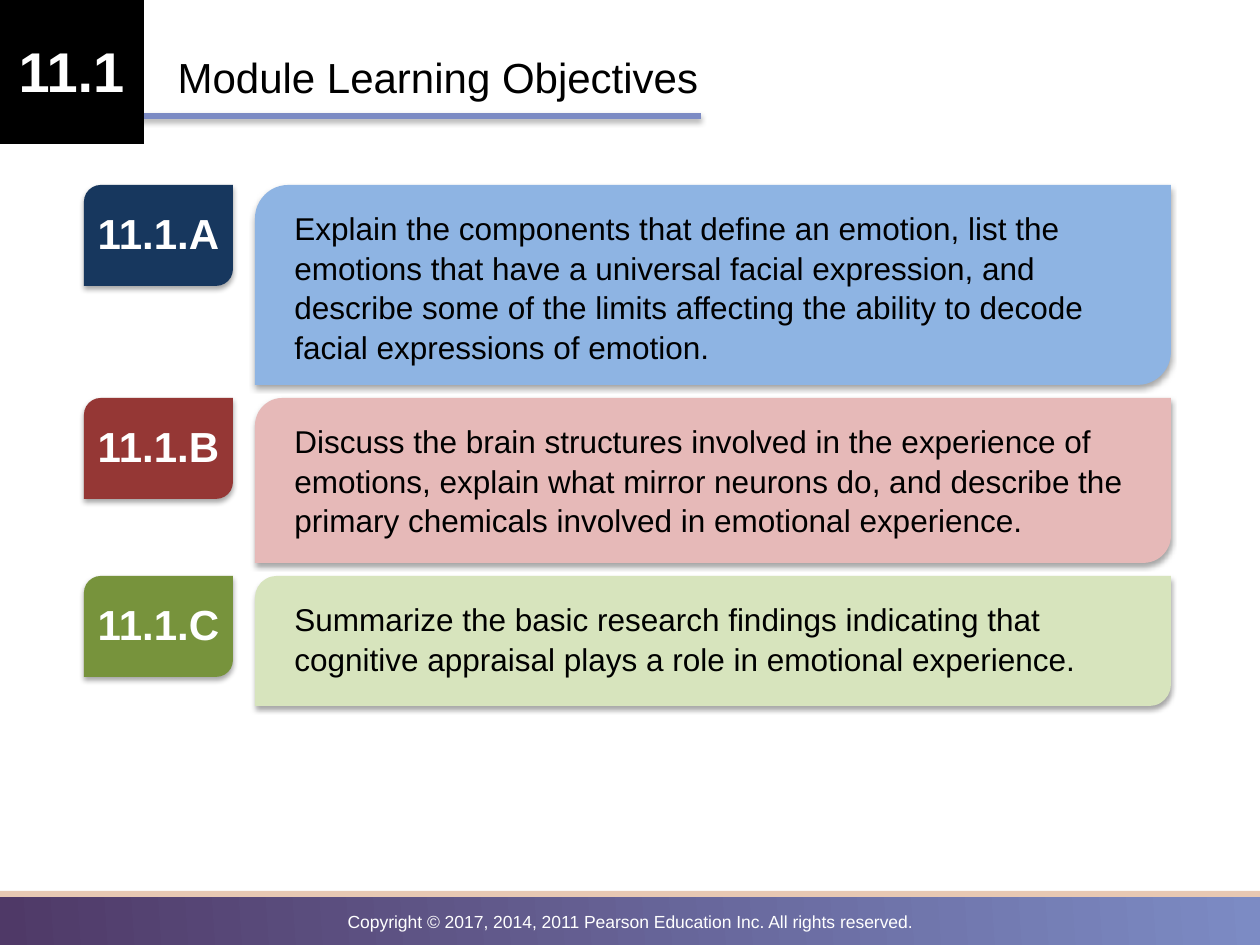
"""Build the Module Learning Objectives slide with three colour-coded objective cards."""
from dataclasses import dataclass
from typing import NamedTuple

from lxml.etree import SubElement
from pptx import Presentation
from pptx.dml.color import RGBColor
from pptx.enum.shapes import MSO_SHAPE as Shape
from pptx.enum.text import MSO_ANCHOR as Anchor, PP_ALIGN as Align
from pptx.oxml.ns import qn
from pptx.util import Emu, Pt


@dataclass(frozen=True)
class Theme:
    font: str = "Arial"
    black: str = "000000"
    white: str = "FFFFFF"
    accent: str = "7C8BC4"
    footer_dark: str = "4F3967"
    footer_edge: str = "E7C8B3"
    number_size: int = 32
    heading_size: int = 24
    body_size: int = 18
    footer_size: int = 10


class Box(NamedTuple):
    left: int
    top: int
    width: int
    height: int


class Objective(NamedTuple):
    label: str
    text: str
    lines: int
    dark: str
    light: str


THEME = Theme()
CARD_TOP, CARD_GAP = 185, 13
CARD_PADDING, LINE_HEIGHT = 60, 35
TEXT_OFFSET = 16
OBJECTIVES = [
    Objective("11.1.A", "Explain the components that define an emotion, list the emotions that have "
              "a universal facial expression, and describe some of the limits affecting the ability "
              "to decode facial expressions of emotion.", 4, "17375E", "8EB4E3"),
    Objective("11.1.B", "Discuss the brain structures involved in the experience of emotions, "
              "explain what mirror neurons do, and describe the primary chemicals involved in "
              "emotional experience.", 3, "953735", "E6B9B8"),
    Objective("11.1.C", "Summarize the basic research findings indicating that cognitive appraisal "
              "plays a role in emotional experience.", 2, "77933C", "D7E4BD"),
]


def px(n: int) -> Emu:
    """Convert pixels at 126 to the inch into EMU."""
    return Emu(round(n * 914400 / 126))


def add_shadow(sp) -> None:
    """Give a shape a soft shadow straight below it."""
    effects = sp._element.spPr.find(qn("a:effectLst"))
    shadow = SubElement(effects, qn("a:outerShdw"), blurRad="40000", dist="23000",
                        dir="5400000", rotWithShape="0")
    color = SubElement(shadow, qn("a:srgbClr"), val=THEME.black)
    SubElement(color, qn("a:alpha"), val="35000")


def add_block(s, box: Box, color: str, kind=Shape.RECTANGLE, shadow: bool = False):
    """Add a filled shape without an outline."""
    sp = s.shapes.add_shape(kind, *map(px, box))
    sp.shadow.inherit = False
    sp.line.fill.background()
    sp.fill.solid()
    sp.fill.fore_color.rgb = RGBColor.from_string(color)
    if shadow:
        add_shadow(sp)
    return sp


def write(sp, text: str, size: int, color: str, bold: bool = False,
          align=Align.CENTER, spacing: float = 1.0) -> None:
    """Put one formatted paragraph at the top of a shape."""
    tf = sp.text_frame
    tf.word_wrap = True
    tf.vertical_anchor = Anchor.TOP
    p = tf.paragraphs[0]
    p.text = text
    p.alignment = align
    p.line_spacing = spacing
    p.font.name = THEME.font
    p.font.size = Pt(size)
    p.font.bold = bold
    p.font.color.rgb = RGBColor.from_string(color)


def add_text(s, box: Box, text: str, size: int, color: str, **style) -> None:
    """Add a wrapping text box."""
    write(s.shapes.add_textbox(*map(px, box)), text, size, color, **style)


def add_footer(s) -> None:
    """Draw the gradient footer band with its copyright line."""
    band = add_block(s, Box(0, 892, 1260, 53), THEME.footer_dark)
    band.fill.gradient()
    band.fill.gradient_angle = 4
    for stop, color in zip(band.fill.gradient_stops, (THEME.footer_dark, THEME.accent)):
        stop.color.rgb = RGBColor.from_string(color)
    add_block(s, Box(0, 891, 1260, 6), THEME.footer_edge)
    add_text(s, Box(0, 905, 1260, 34),
             "Copyright © 2017, 2014, 2011 Pearson Education Inc. All rights reserved.",
             THEME.footer_size, THEME.white)


def add_header(s) -> None:
    """Draw the module number, the title and its rule."""
    add_block(s, Box(0, 113, 701, 6), THEME.accent, shadow=True)
    add_block(s, Box(0, 0, 144, 144), THEME.black)
    add_text(s, Box(-1, 30, 145, 81), "11.1", THEME.number_size, THEME.white, bold=True)
    title = s.shapes.title
    title.left, title.top, title.width, title.height = map(px, Box(165, 45, 971, 63))
    write(title, "Module Learning Objectives", THEME.heading_size, THEME.black, align=Align.LEFT)


def add_objective(s, item: Objective, top: int) -> int:
    """Draw one objective and return the top of the next one."""
    height = CARD_PADDING + LINE_HEIGHT * item.lines
    text_top = top + TEXT_OFFSET
    add_block(s, Box(84, top, 149, 101), item.dark, Shape.ROUND_2_DIAG_RECTANGLE, shadow=True)
    add_text(s, Box(84, text_top, 149, 63), item.label, THEME.heading_size, THEME.white, bold=True)
    add_block(s, Box(255, top, 916, height), item.light, Shape.ROUND_2_DIAG_RECTANGLE, shadow=True)
    add_text(s, Box(282, text_top, 881, height - 2 * TEXT_OFFSET), item.text,
             THEME.body_size, THEME.black, align=Align.LEFT, spacing=1.05)
    return top + height + CARD_GAP


def main() -> None:
    """Build and save the slide."""
    prs = Presentation()
    prs.slide_width, prs.slide_height = px(1260), px(945)
    s = prs.slides.add_slide(prs.slide_layouts[5])
    add_footer(s)
    add_header(s)
    top = CARD_TOP
    for item in OBJECTIVES:
        top = add_objective(s, item, top)
    prs.save("out.pptx")


if __name__ == "__main__":
    main()
